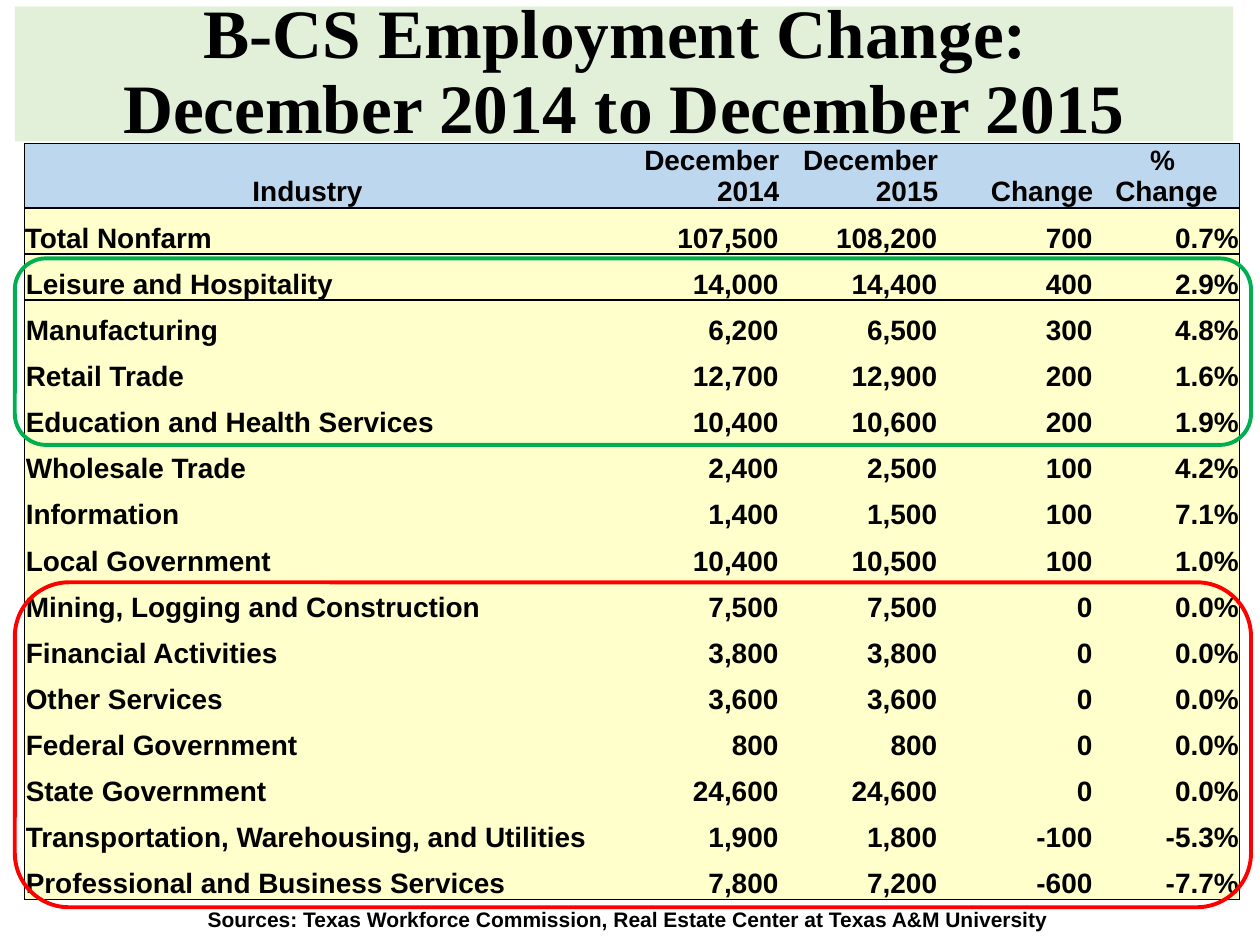
import pptx
import pptx.util
import pptx.dml.color
import pptx.enum.shapes
import pptx.enum.text
from lxml import etree

Cm = pptx.util.Cm
Pt = pptx.util.Pt
ALIGN = pptx.enum.text.PP_ALIGN
ANCHOR = pptx.enum.text.MSO_ANCHOR
AUTO_SIZE = pptx.enum.text.MSO_AUTO_SIZE
ROUNDED = pptx.enum.shapes.MSO_SHAPE.ROUNDED_RECTANGLE
DRAWING_NS = "http://schemas.openxmlformats.org/drawingml/2006/main"

COLOURS = {
    "text": "000000",
    "title": "E2F0D9",
    "header": "BDD7EE",
    "body": "FFFFCC",
    "growth": "00B050",
    "decline": "FF0000",
}

TITLE_FONT = {"name": "Times New Roman", "size": Pt(39.6), "bold": True}
TABLE_FONT = {"name": "Arial", "size": Pt(16), "bold": True}
SOURCE_FONT = {"name": "Arial", "size": Pt(12), "bold": True}

COLUMN_WIDTHS = [11.4, 3.81, 3.2, 3.13, 2.95]
HEADER_HEIGHT = 1.3
ROW_HEIGHT = 0.93
HEADERS = ["Industry", "December\n2014", "December\n2015", "Change", "% \nChange"]
EMPLOYMENT = [
    ("Total Nonfarm", "107,500", "108,200", "700", "0.7%"),
    ("Leisure and Hospitality", "14,000", "14,400", "400", "2.9%"),
    ("Manufacturing", "6,200", "6,500", "300", "4.8%"),
    ("Retail Trade", "12,700", "12,900", "200", "1.6%"),
    ("Education and Health Services", "10,400", "10,600", "200", "1.9%"),
    ("Wholesale Trade", "2,400", "2,500", "100", "4.2%"),
    ("Information", "1,400", "1,500", "100", "7.1%"),
    ("Local Government", "10,400", "10,500", "100", "1.0%"),
    ("Mining, Logging and Construction", "7,500", "7,500", "0", "0.0%"),
    ("Financial Activities", "3,800", "3,800", "0", "0.0%"),
    ("Other Services", "3,600", "3,600", "0", "0.0%"),
    ("Federal Government", "800", "800", "0", "0.0%"),
    ("State Government", "24,600", "24,600", "0", "0.0%"),
    ("Transportation, Warehousing, and Utilities", "1,900", "1,800", "-100", "-5.3%"),
    ("Professional and Business Services", "7,800", "7,200", "-600", "-7.7%"),
]


def apply_format(target, values):
    for attribute, value in values.items():
        setattr(target, attribute, value)


def rgb(role):
    return pptx.dml.color.RGBColor.from_string(COLOURS[role])


def paint(target, role):
    target.fill.solid()
    target.fill.fore_color.rgb = rgb(role)


def write_text(frame, wording, font, alignment):
    frame.text = wording
    for paragraph in frame.paragraphs:
        paragraph.alignment = alignment
        for run in paragraph.runs:
            apply_format(run.font, font)
            run.font.color.rgb = rgb("text")


def add_title(slide):
    title = slide.shapes.title
    apply_format(title, {"left": Cm(0.3), "top": Cm(0.13),
                         "width": Cm(24.56), "height": Cm(2.72)})
    paint(title, "title")
    frame = title.text_frame
    write_text(frame, "B-CS Employment Change: \vDecember 2014 to December 2015",
               TITLE_FONT, ALIGN.CENTER)
    apply_format(frame, {"auto_size": AUTO_SIZE.NONE, "word_wrap": True,
                         "vertical_anchor": ANCHOR.MIDDLE})
    frame.paragraphs[0].line_spacing = 0.9


def set_borders(cell, widths):
    properties = cell._tc.get_or_add_tcPr()
    for side in "LRTB":
        width = widths.get(side, 0)
        border = etree.SubElement(properties, f"{{{DRAWING_NS}}}ln{side}", w=str(Pt(width)))
        if width:
            fill = etree.SubElement(border, f"{{{DRAWING_NS}}}solidFill")
            etree.SubElement(fill, f"{{{DRAWING_NS}}}srgbClr", val=COLOURS["text"])
        else:
            etree.SubElement(border, f"{{{DRAWING_NS}}}noFill")


def border_widths(row, column):
    rules = {0: 0.5, 1: 1, 2: 1, 3: 1, len(EMPLOYMENT) + 1: 0.5}
    widths = {"T": rules.get(row, 0), "B": rules.get(row + 1, 0)}
    if column == 0:
        widths["L"] = 0.5
    if column == len(HEADERS) - 1:
        widths["R"] = 0.5
    return widths


def cell_alignment(row, column):
    if row == 0 and column in (0, len(HEADERS) - 1):
        return ALIGN.CENTER
    return ALIGN.LEFT if column == 0 else ALIGN.RIGHT


def add_employment_table(slide):
    records = [HEADERS, *EMPLOYMENT]
    height = HEADER_HEIGHT + ROW_HEIGHT * len(EMPLOYMENT)
    table = slide.shapes.add_table(len(records), len(HEADERS), Cm(0.5), Cm(2.89),
                                   Cm(sum(COLUMN_WIDTHS)), Cm(height)).table
    apply_format(table, {"first_row": False, "horz_banding": False})
    for column, width in zip(table.columns, COLUMN_WIDTHS):
        column.width = Cm(width)
    for row, record in enumerate(records):
        table.rows[row].height = Cm(ROW_HEIGHT if row else HEADER_HEIGHT)
        for column, wording in enumerate(record):
            cell = table.cell(row, column)
            flush = row == 0 or (row, column) == (1, 0)
            inset = Cm(0 if flush else 0.02)
            apply_format(cell, {"margin_left": inset, "margin_right": inset,
                                "margin_top": inset, "margin_bottom": 0,
                                "vertical_anchor": ANCHOR.BOTTOM})
            set_borders(cell, border_widths(row, column))
            paint(cell, "body" if row else "header")
            write_text(cell.text_frame, wording, TABLE_FONT, cell_alignment(row, column))


def add_sources(slide):
    sources = slide.shapes.add_textbox(Cm(1.65), Cm(18.16), Cm(22.02), Cm(0.77))
    frame = sources.text_frame
    apply_format(frame, {"word_wrap": True, "auto_size": AUTO_SIZE.SHAPE_TO_FIT_TEXT})
    write_text(frame,
               "Sources: Texas Workforce Commission, Real Estate Center at Texas A&M University",
               SOURCE_FONT, ALIGN.CENTER)


def add_outline(slide, top, height, role):
    outline = slide.shapes.add_shape(ROUNDED, Cm(0.3), Cm(top), Cm(24.92), Cm(height))
    outline.shadow.inherit = False
    outline.fill.background()
    outline.line.color.rgb = rgb(role)
    outline.line.width = Pt(2.25)


def main():
    presentation = pptx.Presentation()
    apply_format(presentation, {"slide_width": Cm(25.4), "slide_height": Cm(19.05)})
    slide = presentation.slides.add_slide(presentation.slide_layouts[5])
    add_title(slide)
    add_employment_table(slide)
    add_sources(slide)
    add_outline(slide, 5.21, 3.76, "growth")
    add_outline(slide, 11.74, 6.55, "decline")
    presentation.save("out.pptx")


if __name__ == "__main__":
    main()
